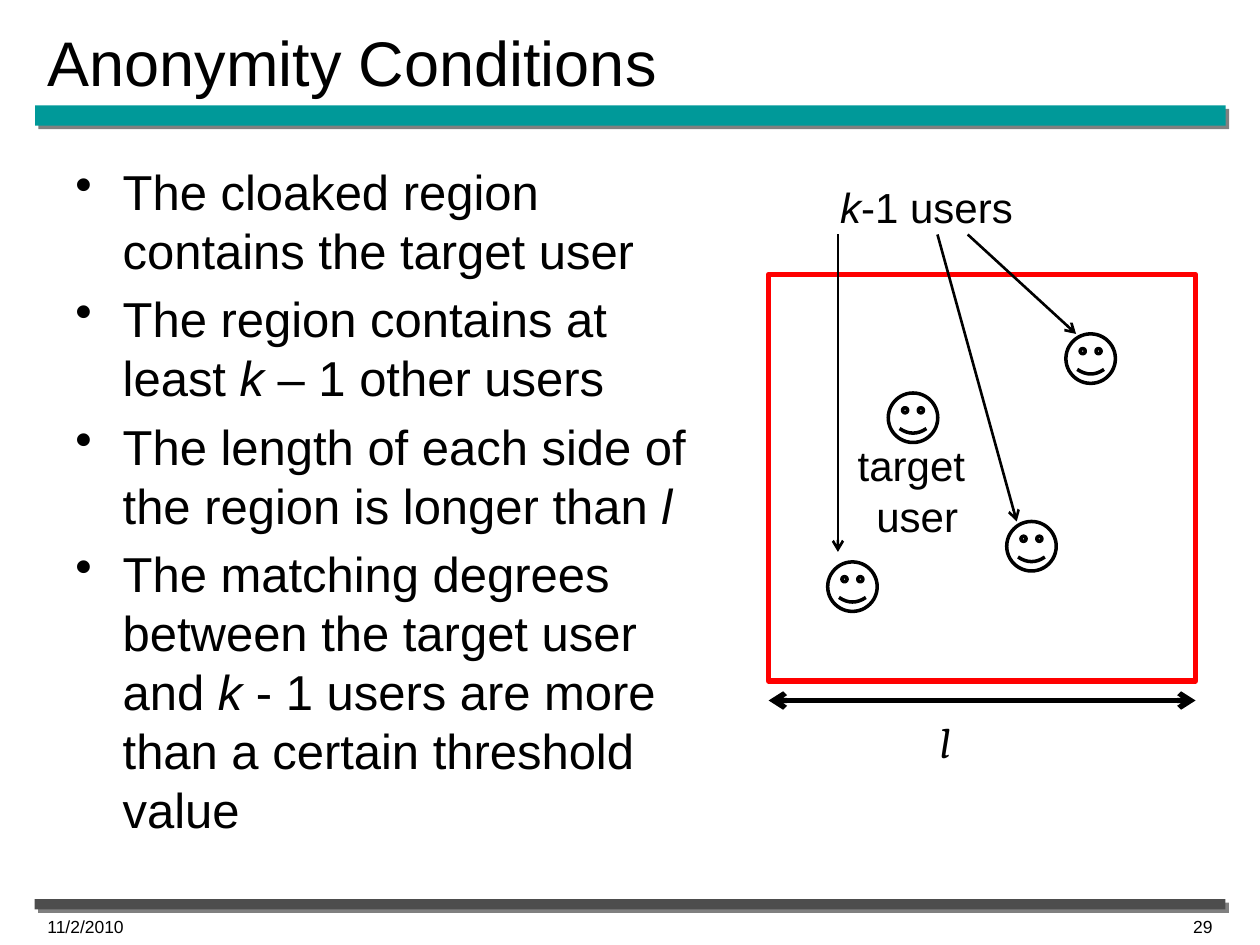
"""Build the Anonymity Conditions slide: bullets beside a cloaked-region diagram."""
from lxml import etree
from pptx import Presentation
from pptx.dml.color import RGBColor
from pptx.enum import shapes, text
from pptx.oxml import parse_xml
from pptx.oxml.ns import nsdecls, qn
from pptx.util import Pt

BLACK = RGBColor(0, 0, 0)
WHITE = RGBColor(255, 255, 255)
RED = RGBColor(255, 0, 0)
TEAL = RGBColor(0, 0x99, 0x99)
GRAY = RGBColor(0x4D, 0x4D, 0x4D)
LEFT, CENTER, RIGHT = text.PP_ALIGN.LEFT, text.PP_ALIGN.CENTER, text.PP_ALIGN.RIGHT
SHADOW = (f'<a:effectLst {nsdecls("a")}><a:outerShdw dist="35560" dir="2700000" algn="ctr" '
          'rotWithShape="0"><a:srgbClr val="808080"/></a:outerShdw></a:effectLst>')


def write(sp, content, size=24, font="Arial", align=LEFT, anchor=text.MSO_ANCHOR.TOP,
          wrap=True, bullet=False):
    """Fill a shape with one paragraph per line; asterisks enclose italics."""
    tf = sp.text_frame
    tf.word_wrap, tf.vertical_anchor = wrap, anchor
    tf.auto_size = text.MSO_AUTO_SIZE.NONE
    for i, line in enumerate(content.split("\n")):
        p = tf.add_paragraph() if i else tf.paragraphs[0]
        p.alignment = align
        if bullet:
            p.space_before = Pt(size * 0.2)
            pPr = p._p.get_or_add_pPr()
            pPr.set("marL", str(Pt(27)))
            pPr.set("indent", str(-Pt(27)))
            etree.SubElement(pPr, qn("a:buChar")).set("char", "•")
        for j, part in enumerate(line.split("*")):
            if part:
                r = p.add_run()
                r.text = part
                r.font.size, r.font.name = Pt(size), font
                r.font.italic = j % 2 == 1
                r.font.color.rgb = BLACK


def arrow(x1, y1, x2, y2, width, ends=("tailEnd",)):
    """Draw a black line with open arrowheads at the named ends."""
    ln = s.shapes.add_connector(shapes.MSO_CONNECTOR.STRAIGHT, Pt(x1), Pt(y1), Pt(x2), Pt(y2))
    ln.line.color.rgb, ln.line.width = BLACK, Pt(width)
    for end in ends:
        etree.SubElement(ln.line._get_or_add_ln(), qn(f"a:{end}")).set("type", "arrow")
    etree.SubElement(ln._element.spPr, qn("a:effectLst"))


prs = Presentation()
prs.slide_width, prs.slide_height = Pt(720), Pt(540)
s = prs.slides.add_slide(prs.slide_layouts[5])

for x, y, h, color in [(20, 60.3, 11.5, TEAL), (19.8, 513.8, 5.8, GRAY)]:
    bar = s.shapes.add_shape(shapes.MSO_SHAPE.RECTANGLE, Pt(x), Pt(y), Pt(680.4), Pt(h))
    bar.fill.solid()
    bar.fill.fore_color.rgb = color
    bar.line.fill.background()
    bar._element.spPr.append(parse_xml(SHADOW))

title = s.shapes.title
title.left, title.top, title.width, title.height = Pt(20), Pt(9.5), Pt(680.4), Pt(51)
write(title, "Anonymity Conditions", size=36, anchor=text.MSO_ANCHOR.MIDDLE)

for x, y in [(507.6, 224.6), (575.3, 298), (473, 321.1), (609.1, 190.8)]:
    face = s.shapes.add_shape(shapes.MSO_SHAPE.SMILEY_FACE, Pt(x), Pt(y), Pt(28.3), Pt(28.3))
    face.fill.solid()
    face.fill.fore_color.rgb = WHITE
    face.line.color.rgb, face.line.width = BLACK, Pt(2)
    face.shadow.inherit = False

region = s.shapes.add_shape(shapes.MSO_SHAPE.RECTANGLE, Pt(439.2), Pt(156.8), Pt(244), Pt(232.4))
region.fill.background()
region.line.color.rgb, region.line.width = RED, Pt(3)
region.shadow.inherit = False

arrow(439.2, 400.3, 683.2, 400.3, 3, ends=("headEnd", "tailEnd"))
for x1, x2, y2 in [(478.8, 478.8, 315.4), (535.7, 581, 298), (553, 614.9, 190.8)]:
    arrow(x1, 134, x2, y2, 1.5)

BULLETS = """The cloaked region contains the target user
The region contains at least *k* – 1 other users
The length of each side of the region is longer than *l*
The matching degrees between the target user and *k* - 1 users are more than a certain threshold value"""

for x, y, w, h, content, style in [
    (36, 88.6, 381, 394, BULLETS, dict(size=28, bullet=True)),
    (20, 520, 168, 20, "11/2/2010", dict(size=10)),
    (532, 520, 168, 20, "29", dict(size=10, align=RIGHT)),
    (482.4, 247.7, 83.5, 65.5, "target \nuser", dict(align=CENTER, wrap=False)),
    (530, 406, 79, 36, "*l*", dict(font="Cambria")),
    (473, 100, 147.6, 36, "*k*-1 users", {}),
]:
    write(s.shapes.add_textbox(Pt(x), Pt(y), Pt(w), Pt(h)), content, **style)

prs.save("out.pptx")
